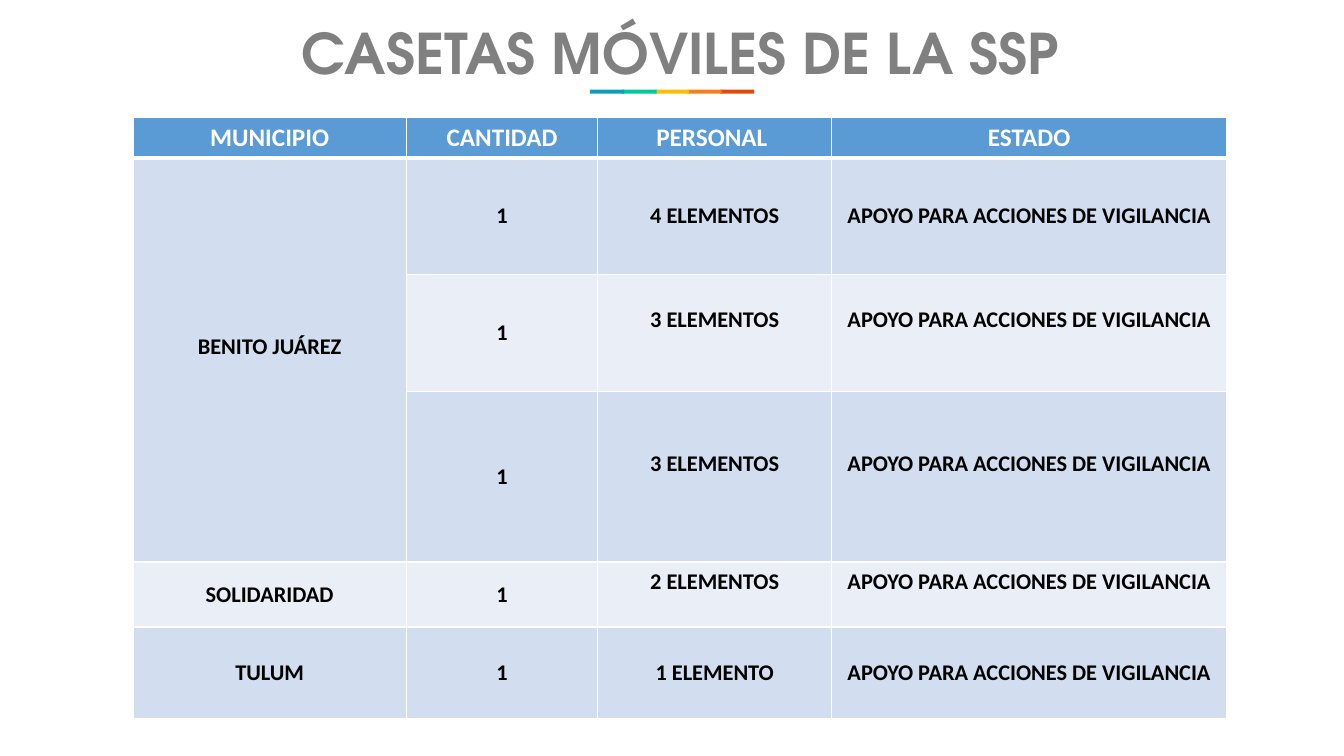
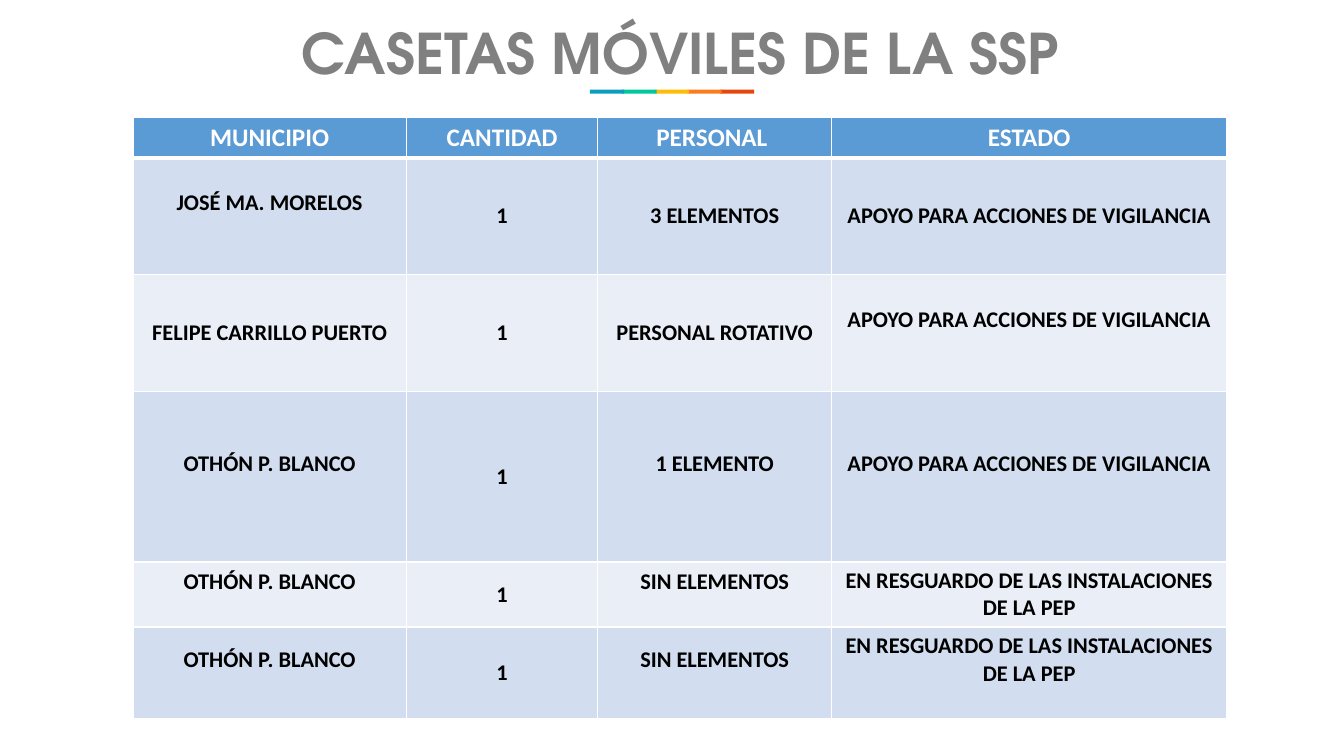
from lxml.etree import SubElement
from pptx import Presentation
from pptx.dml.color import RGBColor
from pptx.enum.shapes import MSO_SHAPE
from pptx.enum.text import MSO_ANCHOR, MSO_AUTO_SIZE, PP_ALIGN
from pptx.oxml.ns import qn
from pptx.util import Inches, Pt

WHITE = RGBColor(0xFF, 0xFF, 0xFF)
BLACK = RGBColor(0x00, 0x00, 0x00)
GRAY = RGBColor(0x80, 0x80, 0x80)
HEADER_BLUE = RGBColor(0x5B, 0x9B, 0xD5)
ROW_BLUES = (RGBColor(0xD2, 0xDE, 0xEF), RGBColor(0xEA, 0xEF, 0xF7))
STRIPE_COLORS = (
    RGBColor(0x0D, 0x9E, 0xBB),
    RGBColor(0x00, 0xC8, 0x9D),
    RGBColor(0xFE, 0xBC, 0x07),
    RGBColor(0xF9, 0x7D, 0x1E),
    RGBColor(0xE5, 0x46, 0x0D),
)
TITLE_FONT = "TeX Gyre Adventor"
BODY_FONT = "Calibri"

# Percentages of the slide's width and height
COLUMN_WIDTHS = (20.33, 14.25, 17.4, 29.4)
ROW_HEIGHTS = (5.33, 15.47, 15.47, 22.53, 8.6, 12.13)
LIFTED_MARGIN = Inches(0.31)

TITLE = "CASETAS MÓVILES DE LA SSP"
HEADINGS = ("MUNICIPIO", "CANTIDAD", "PERSONAL ", "ESTADO")
VIGILANCE = "APOYO PARA ACCIONES DE VIGILANCIA"
GUARDED = "EN RESGUARDO DE LAS INSTALACIONES DE LA PEP"

# Each booth: its cells, then the columns whose text sits above the middle
NORTH_BOOTHS = (
    (("BENITO JUÁREZ", "1", "4 ELEMENTOS", VIGILANCE), {0}),
    (("", "1", "3 ELEMENTOS", VIGILANCE), {2, 3}),
    (("", "1", "3 ELEMENTOS", VIGILANCE), {2, 3}),
    (("SOLIDARIDAD", "1", "2 ELEMENTOS", VIGILANCE), {2, 3}),
    (("TULUM", "1", "1 ELEMENTO", VIGILANCE), set()),
)
SOUTH_BOOTHS = (
    (("JOSÉ MA. MORELOS", "1", "3 ELEMENTOS", VIGILANCE), {0}),
    (("FELIPE CARRILLO PUERTO", "1", "PERSONAL ROTATIVO", VIGILANCE), {3}),
    (("OTHÓN P. BLANCO", "1", "1 ELEMENTO", VIGILANCE), {0, 2, 3}),
    (("OTHÓN P. BLANCO", "1", "SIN ELEMENTOS", GUARDED), {0, 2}),
    (("OTHÓN P. BLANCO", "1", "SIN ELEMENTOS", GUARDED), {0, 2, 3}),
)


def set_borders(cell, bottom):
    """Draw white cell borders, 1 pt except for the bottom one."""
    properties = cell._tc.get_or_add_tcPr()
    sides = (("lnL", 1), ("lnR", 1), ("lnT", 1), ("lnB", bottom))
    for position, (side, points) in enumerate(sides):
        line = properties.makeelement(qn(f"a:{side}"), {"w": str(Pt(points))})
        fill = SubElement(line, qn("a:solidFill"))
        SubElement(fill, qn("a:srgbClr"), val=str(WHITE))
        properties.insert(position, line)


class Deck:
    def __init__(self):
        self.presentation = Presentation()
        self.presentation.slide_width = Inches(13.33)
        self.presentation.slide_height = Inches(7.5)
        self.slide = None

    def across(self, percent):
        return round(self.presentation.slide_width * percent / 100)

    def down(self, percent):
        return round(self.presentation.slide_height * percent / 100)

    def box(self, left, top, width, height):
        return (self.across(left), self.down(top),
                self.across(width), self.down(height))

    def style(self, paragraph, size, color, font=BODY_FONT):
        paragraph.alignment = PP_ALIGN.CENTER
        paragraph.font.name = font
        paragraph.font.size = Pt(size)
        paragraph.font.bold = True
        paragraph.font.color.rgb = color

    def add_slide(self, title):
        layout = self.presentation.slide_layouts.get_by_name("Title Only")
        self.slide = self.presentation.slides.add_slide(layout)
        heading = self.slide.shapes.title
        heading.left, heading.top, heading.width, heading.height = self.box(
            13.2, 4.4, 74.87, 6)
        frame = heading.text_frame
        frame.text = title
        frame.word_wrap = True
        frame.auto_size = MSO_AUTO_SIZE.NONE
        frame.vertical_anchor = MSO_ANCHOR.MIDDLE
        frame.paragraphs[0].line_spacing = 0.9
        self.style(frame.paragraphs[0], 40, GRAY, TITLE_FONT)
        self.add_stripe()

    def add_stripe(self):
        """Draw the colour stripe, each piece lying over the next one."""
        for index, color in reversed(list(enumerate(STRIPE_COLORS))):
            piece = self.slide.shapes.add_shape(
                MSO_SHAPE.RECTANGLE,
                *self.box(43.89 + 2.42 * index, 11.87, 2.55, 0.53))
            piece.shadow.inherit = False
            piece.fill.solid()
            piece.fill.fore_color.rgb = color
            piece.line.fill.background()

    def fill_cell(self, cell, text, size, color, background, bottom=1):
        cell.text = text
        self.style(cell.text_frame.paragraphs[0], size, color)
        cell.fill.solid()
        cell.fill.fore_color.rgb = background
        set_borders(cell, bottom)

    def add_booth_table(self, booths):
        table = self.slide.shapes.add_table(
            len(booths) + 1, len(HEADINGS),
            *self.box(9.9, 15.47, sum(COLUMN_WIDTHS), sum(ROW_HEIGHTS))).table
        for column, width in zip(table.columns, COLUMN_WIDTHS):
            column.width = self.across(width)
        for row, height in zip(table.rows, ROW_HEIGHTS):
            row.height = self.down(height)
        for column, heading in enumerate(HEADINGS):
            self.fill_cell(table.cell(0, column), heading, 18, WHITE,
                           HEADER_BLUE, bottom=3)
        for row, (texts, lifted) in enumerate(booths, start=1):
            background = ROW_BLUES[(row - 1) % 2]
            for column, text in enumerate(texts):
                cell = table.cell(row, column)
                self.fill_cell(cell, text, 16, BLACK, background)
                cell.vertical_anchor = MSO_ANCHOR.MIDDLE
                if column in lifted:
                    cell.margin_bottom = LIFTED_MARGIN
        return table


def main():
    deck = Deck()
    deck.add_slide(TITLE)
    north = deck.add_booth_table(NORTH_BOOTHS)
    north.cell(1, 0).merge(north.cell(3, 0))
    deck.add_slide(TITLE)
    deck.add_booth_table(SOUTH_BOOTHS)
    deck.presentation.save("out.pptx")


if __name__ == "__main__":
    main()
